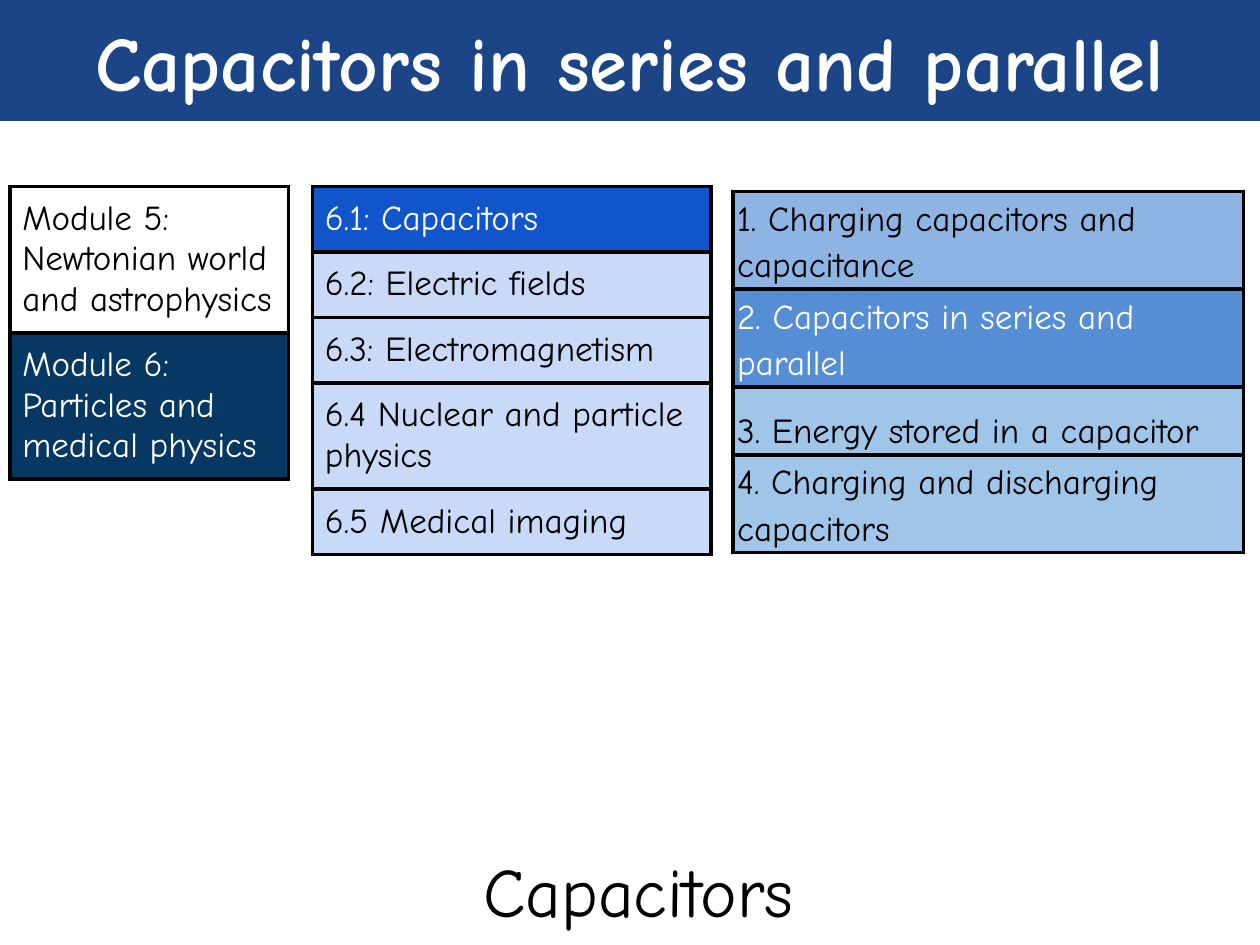
from lxml import etree
from pptx import Presentation
from pptx.dml.color import RGBColor
from pptx.enum.text import MSO_ANCHOR, PP_ALIGN
from pptx.oxml.ns import qn
from pptx.util import Cm, Pt

TOP, MIDDLE, BOTTOM = MSO_ANCHOR.TOP, MSO_ANCHOR.MIDDLE, MSO_ANCHOR.BOTTOM
CENTER = PP_ALIGN.CENTER

FONT = "Comic Neue"
BLACK = RGBColor(0x00, 0x00, 0x00)
WHITE = RGBColor(0xFF, 0xFF, 0xFF)
BANNER_BLUE = RGBColor(0x1C, 0x45, 0x87)
NAVY = RGBColor(0x07, 0x37, 0x63)
ROYAL_BLUE = RGBColor(0x11, 0x55, 0xCC)
PALE_BLUE = RGBColor(0xC9, 0xDA, 0xF8)
SOFT_BLUE = RGBColor(0x8E, 0xB4, 0xE3)
MID_BLUE = RGBColor(0x55, 0x8E, 0xD5)
SKY_BLUE = RGBColor(0x9F, 0xC5, 0xE8)

# Each row: text, height in cm, fill, text colour
MODULES = [
    ("Module 5: Newtonian world and astrophysics", 2.95, WHITE, BLACK),
    ("Module 6: Particles and medical physics", 2.95, NAVY, WHITE),
]
CHAPTERS = [
    ("6.1: Capacitors", 1.32, ROYAL_BLUE, WHITE),
    ("6.2: Electric fields", 1.32, PALE_BLUE, BLACK),
    ("6.3: Electromagnetism", 1.32, PALE_BLUE, BLACK),
    ("6.4 Nuclear and particle physics", 2.14, PALE_BLUE, BLACK),
    ("6.5 Medical imaging", 1.32, PALE_BLUE, BLACK),
]
LESSONS = [
    ("1. Charging capacitors and capacitance", 1.97, SOFT_BLUE, BLACK),
    ("2. Capacitors in series and parallel", 1.97, MID_BLUE, WHITE),
    ("3. Energy stored in a capacitor", 1.37, SKY_BLUE, BLACK),
    ("4. Charging and discharging capacitors", 1.97, SKY_BLUE, BLACK),
]


def format_font(paragraph, size, color, bold=False):
    for run in paragraph.runs:
        run.font.name = FONT
        run.font.size = Pt(size)
        run.font.bold = bold
        run.font.color.rgb = color


def fill_heading(shape, box, text, size, color, fill, bold=False):
    """Place a heading placeholder in the box and centre its text."""
    shape.left, shape.top, shape.width, shape.height = map(Cm, box)
    shape.fill.solid()
    shape.fill.fore_color.rgb = fill
    text_frame = shape.text_frame
    text_frame.text = text
    text_frame.vertical_anchor = MIDDLE
    paragraph = text_frame.paragraphs[0]
    paragraph.alignment = CENTER
    paragraph.space_before = Pt(0)
    format_font(paragraph, size, color, bold)


def add_cell_borders(cell):
    properties = cell._tc.get_or_add_tcPr()
    for index, side in enumerate(("lnL", "lnR", "lnT", "lnB")):
        line = etree.Element(qn(f"a:{side}"), w=str(Pt(2.25)))
        fill = etree.SubElement(line, qn("a:solidFill"))
        etree.SubElement(fill, qn("a:srgbClr"), val=str(BLACK))
        properties.insert(index, line)


def add_list_table(slide, left, top, width, rows, margins, anchor, line_spacing):
    """Add a one-column table; margins are (horizontal, vertical) in cm."""
    height = sum(row[1] for row in rows)
    frame = slide.shapes.add_table(
        len(rows), 1, Cm(left), Cm(top), Cm(width), Cm(height))
    table = frame.table
    table.first_row = table.horz_banding = False
    for index, (text, row_height, fill, color) in enumerate(rows):
        table.rows[index].height = Cm(row_height)
        cell = table.cell(index, 0)
        cell.margin_left = cell.margin_right = Cm(margins[0])
        cell.margin_top = cell.margin_bottom = Cm(margins[1])
        cell.vertical_anchor = anchor
        cell.fill.solid()
        cell.fill.fore_color.rgb = fill
        add_cell_borders(cell)
        cell.text_frame.text = text
        paragraph = cell.text_frame.paragraphs[0]
        paragraph.line_spacing = line_spacing
        format_font(paragraph, 20, color)


def main():
    presentation = Presentation()
    presentation.slide_width = Cm(25.4)
    presentation.slide_height = Cm(19.05)
    slide = presentation.slides.add_slide(presentation.slide_layouts[0])
    title, subtitle = slide.placeholders

    fill_heading(title, (0, 0, 25.4, 2.44), "Capacitors in series and parallel",
                 44, WHITE, BANNER_BLUE, bold=True)
    fill_heading(subtitle, (5.77, 17.15, 14.2, 1.57), "Capacitors",
                 39.6, BLACK, WHITE)

    add_list_table(slide, 0.2, 3.76, 5.61, MODULES, (0.25, 0.25), TOP, 1.0)
    add_list_table(slide, 6.3, 3.76, 8.03, CHAPTERS, (0.25, 0.25), TOP, 1.0)
    add_list_table(slide, 14.78, 3.86, 10.29, LESSONS, (0.08, 0.05), BOTTOM, 1.15)

    presentation.save("out.pptx")


if __name__ == "__main__":
    main()
